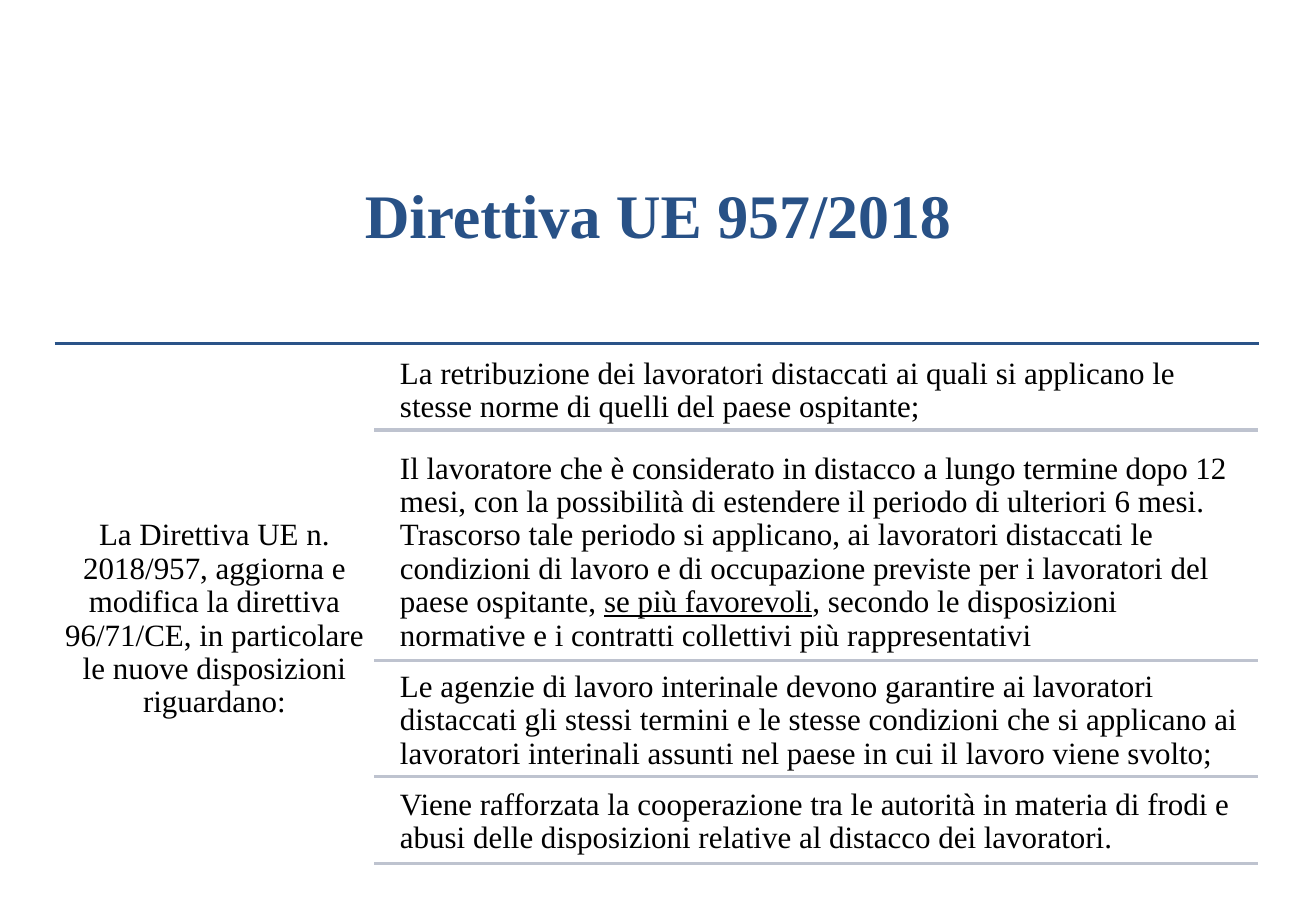
from pptx import Presentation
from pptx.dml.color import RGBColor
from pptx.enum.shapes import MSO_CONNECTOR
from pptx.enum.text import MSO_ANCHOR, MSO_AUTO_SIZE, PP_ALIGN
from pptx.oxml.ns import qn
from pptx.util import Inches, Mm, Pt
from lxml import etree

LEFT, CENTER = PP_ALIGN.LEFT, PP_ALIGN.CENTER
TOP, MIDDLE = MSO_ANCHOR.TOP, MSO_ANCHOR.MIDDLE
STRAIGHT = MSO_CONNECTOR.STRAIGHT
NO_FIT = MSO_AUTO_SIZE.NONE
FONT = "Times New Roman"
WIDTH, HEIGHT = Mm(300), Mm(210)
EDGE, SPLIT, INNER, END = 0.49, 3.36, 3.51, 11.29
HEAD = 3.08
BLACK, BLUE, NAVY, GREY = "000000", "285186", "2A5388", "BEC3CF"

INTRO = [("La Direttiva UE n. 2018/957, aggiorna e modifica la direttiva "
          "96/71/CE, in particolare le nuove disposizioni riguardano:", False)]
ROWS = [
    (3.13, 3.86, [("La retribuzione dei lavoratori distaccati ai quali si "
                   "applicano le stesse norme di quelli del paese ospitante;", False)]),
    (3.98, 5.93, [("Il lavoratore che è considerato in distacco a lungo termine "
                   "dopo 12 mesi, con la possibilità di estendere il periodo di "
                   "ulteriori 6 mesi. Trascorso tale periodo si applicano, ai "
                   "lavoratori distaccati le condizioni di lavoro e di occupazione "
                   "previste per i lavoratori del paese ospitante, ", False),
                  ("se più favorevoli", True),
                  (", secondo le disposizioni normative e i contratti collettivi "
                   "più rappresentativi", False)]),
    (5.94, 6.97, [("Le agenzie di lavoro interinale devono garantire ai lavoratori "
                   "distaccati gli stessi termini e le stesse condizioni che si "
                   "applicano ai lavoratori interinali assunti nel paese in cui "
                   "il lavoro viene svolto;", False)]),
    (7.0, 7.75, [("Viene rafforzata la cooperazione tra le autorità in materia di "
                  "frodi e abusi delle disposizioni relative al distacco dei "
                  "lavoratori.", False)]),
]


def paint(target, color):
    target.rgb = RGBColor.from_string(color)


def place(shape, left, top, width, height):
    shape.left, shape.top = Inches(left), Inches(top)
    shape.width, shape.height = Inches(width), Inches(height)


def write(shape, runs, size=20, color=BLACK, align=LEFT, anchor=TOP, inset=0.08, bold=False):
    frame = shape.text_frame
    frame.word_wrap = True
    frame.auto_size = NO_FIT
    frame.vertical_anchor = anchor
    frame.margin_left = frame.margin_right = Inches(inset)
    frame.margin_top = frame.margin_bottom = Inches(inset)
    para = frame.paragraphs[0]
    para.alignment = align
    para.line_spacing = 0.9
    para.space_before = Pt(0)
    for text, under in runs:
        run = para.add_run()
        run.text = text
        font = run.font
        font.name, font.size = FONT, Pt(size)
        font.bold, font.underline = bold, under
        paint(font.color, color)
    return para


def plain(para):
    props = para._p.get_or_add_pPr()
    props.set("marL", "0")
    props.set("indent", "0")
    etree.SubElement(props, qn("a:buNone"))


def rule(slide, left, right, y, color):
    line = slide.shapes.add_connector(
        STRAIGHT, Inches(left), Inches(y), Inches(right), Inches(y))
    line.line.width = Pt(2)
    paint(line.line.color, color)
    etree.SubElement(line._element.spPr, qn("a:effectLst"))


def entry(slide, top, base, runs):
    box = slide.shapes.add_textbox(0, 0, 0, 0)
    place(box, INNER, top, END - INNER, base - top)
    write(box, runs)
    rule(slide, SPLIT, END, base, GREY)


def main():
    deck = Presentation()
    deck.slide_width, deck.slide_height = WIDTH, HEIGHT
    slide = deck.slides.add_slide(deck.slide_layouts[1])
    title, body = slide.placeholders
    place(title, 0, 1.27, WIDTH.inches, 1.38)
    write(title, [("Direttiva UE 957/2018", False)], 40, BLUE, CENTER, MIDDLE, 0, True)
    place(body, EDGE, 4.58, SPLIT - EDGE, 2.1)
    plain(write(body, INTRO, align=CENTER))
    rule(slide, EDGE, 11.3, HEAD, NAVY)
    for top, base, runs in ROWS:
        entry(slide, top, base, runs)
    deck.save("out.pptx")


if __name__ == "__main__":
    main()
